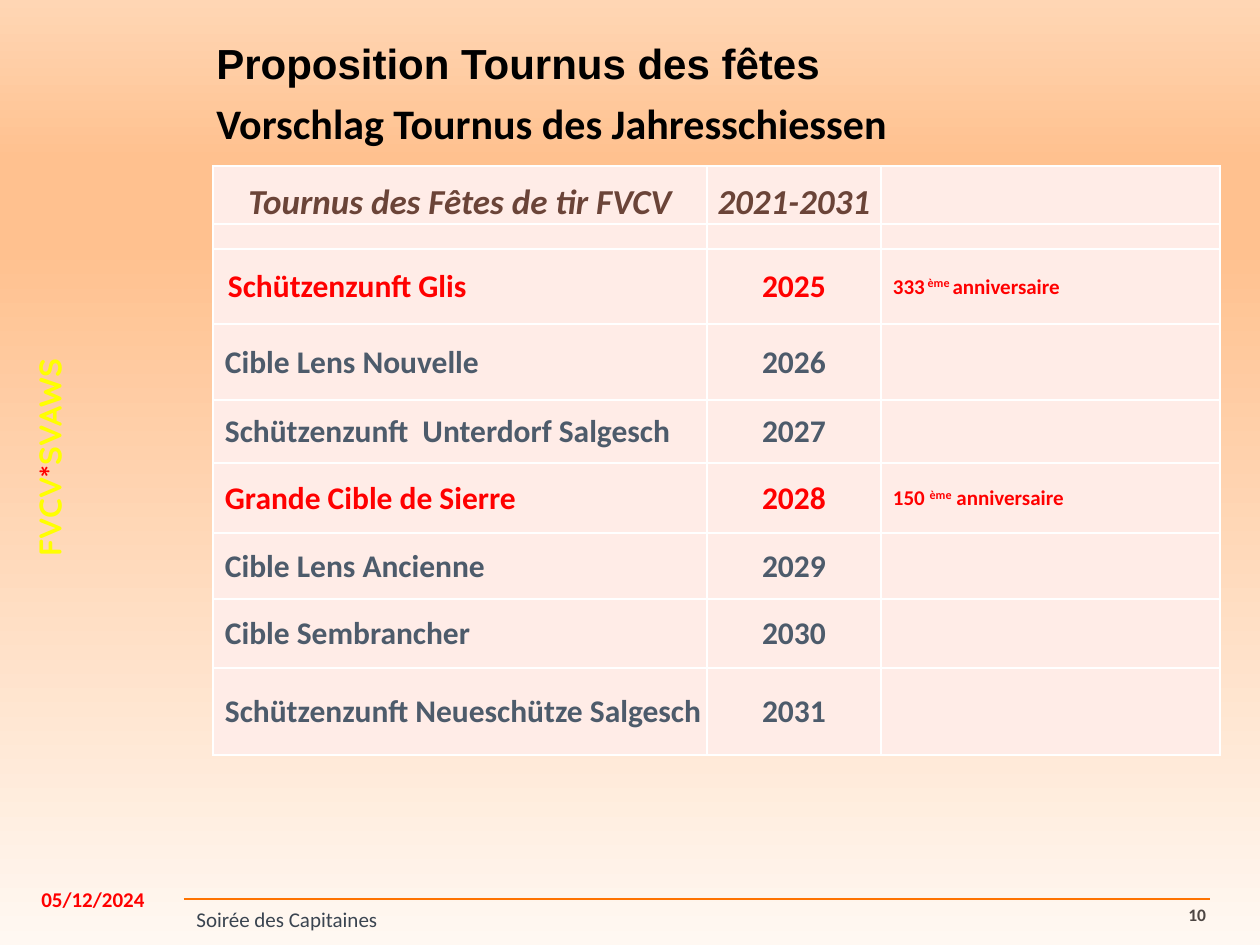
from lxml import etree
from pptx import Presentation
from pptx import util as u
from pptx.dml.color import RGBColor
from pptx.enum import shapes, text
from pptx.oxml.ns import qn

# Content
BACKGROUND = [(0, "FFF8F2"), (74, "FFC18F"), (83, "FFC18F"), (100, "FFD6B4")]
HEADINGS = [("Proposition Tournus des fêtes", "Arial"),
            ("Vorschlag Tournus des Jahresschiessen", "Calibri")]
BANNER = [("FVCV", "FFFF00"), ("*", "FF0000"), ("SVAWS", "FFFF00")]
HEADER = ("Tournus des Fêtes de tir FVCV", "2021-2031")
# society, year, anniversary (number, ordinal, word), row height
FESTIVALS = [
    ("Schützenzunft Glis", "2025", ("333", " ème ", "anniversaire"), 75),
    ("Cible Lens Nouvelle", "2026", None, 76),
    ("Schützenzunft  Unterdorf Salgesch", "2027", None, 63),
    ("Grande Cible de Sierre", "2028", ("150 ", "ème", " anniversaire"), 70),
    ("Cible Lens Ancienne", "2029", None, 66),
    ("Cible Sembrancher", "2030", None, 69),
    ("Schützenzunft Neueschütze Salgesch", "2031", None, 87),
]
COLUMNS = [494, 174, 339]
HEADER_HEIGHT, SPACER_HEIGHT = 58, 25
RED, SLATE, BROWN, CELL = "FF0000", "4D5B6B", "6B4438", "FFECE7"
LEFT, CENTER = text.PP_ALIGN.LEFT, text.PP_ALIGN.CENTER
MIDDLE, BOTTOM = text.MSO_ANCHOR.MIDDLE, text.MSO_ANCHOR.BOTTOM


def px(n):
    return u.Emu(round(n * 914400 / 126))


def rgb(value):
    return RGBColor.from_string(value)


def add_run(paragraph, words, color, **formats):
    run = paragraph.add_run()
    run.text = words
    run.font.color.rgb = rgb(color)
    for name, value in {"name": "Calibri", **formats}.items():
        setattr(run.font, name, value)
    return run


def add_box(left, top, width, height, **formats):
    frame = slide.shapes.add_textbox(px(left), px(top), px(width), px(height)).text_frame
    for name, value in {"word_wrap": True, **formats}.items():
        setattr(frame, name, value)
    return frame


def style_cell(cell):
    cell.fill.solid()
    cell.fill.fore_color.rgb = rgb(CELL)
    properties = cell.fill._xPr
    for index, side in enumerate(("a:lnL", "a:lnR", "a:lnT", "a:lnB")):
        border = etree.Element(qn(side), w=str(u.Pt(1)))
        fill = etree.SubElement(border, qn("a:solidFill"))
        etree.SubElement(fill, qn("a:srgbClr"), val="FFFFFF")
        properties.insert(index, border)
    for name in ("margin_left", "margin_right", "margin_top"):
        setattr(cell, name, px(1))
    cell.margin_bottom = 0
    cell.text_frame.paragraphs[0].font.size = u.Pt(8)


def write_cell(cell, words, color, align=LEFT, anchor=MIDDLE, indent=1, **formats):
    cell.vertical_anchor = anchor
    cell.margin_left = px(indent)
    paragraph = cell.text_frame.paragraphs[0]
    paragraph.alignment = align
    return [add_run(paragraph, part, color, bold=True, **formats) for part in words]


deck = Presentation()
deck.slide_width, deck.slide_height = px(1260), px(945)
slide = deck.slides.add_slide(deck.slide_layouts[6])

# Background gradient, running upwards
background = slide.background.fill
background.gradient()
background.gradient_angle = 90
stops = slide.element.find(".//" + qn("a:gsLst"))
for stop in list(stops):
    stops.remove(stop)
for position, color in BACKGROUND:
    stop = etree.SubElement(stops, qn("a:gs"), pos=str(position * 1000))
    etree.SubElement(stop, qn("a:srgbClr"), val=color)

# Footer rule
rule = slide.shapes.add_connector(shapes.MSO_CONNECTOR.STRAIGHT,
                                  px(184), px(899), px(1210), px(899))
rule.line.color.rgb = rgb("FE7300")
rule.line.width = u.Pt(0.75)
etree.SubElement(rule.element.spPr, qn("a:effectLst"))

# Vertical banner
banner = add_box(24, 344, 63, 228, word_wrap=False)
banner._txBody.bodyPr.set("vert", "vert270")
banner.paragraphs[0].alignment = CENTER
for words, color in BANNER:
    add_run(banner.paragraphs[0], words, color, name="Quicksand", size=u.Pt(18), bold=True)

# Footer texts
footer = add_box(184, 903, 978, 32, vertical_anchor=MIDDLE)
add_run(footer.paragraphs[0], "Soirée des Capitaines", "3A4450", size=u.Pt(12))
date = add_box(23, 880, 140, 32)
date.paragraphs[0].alignment = CENTER
add_run(date.paragraphs[0], "05/12/2024", RED, size=u.Pt(12), bold=True)
number = add_box(1176, 890, 53, 50, vertical_anchor=MIDDLE)
add_run(number.paragraphs[0], "10", "4D4643", size=u.Pt(10), bold=True)

# Headings
title = add_box(204, 28, 942, 78, margin_top=px(10))
for index, (words, font) in enumerate(HEADINGS):
    line = title.add_paragraph() if index else title.paragraphs[0]
    line.space_before = u.Pt(5 if index else 0)
    add_run(line, words, "000000", name=font, size=u.Pt(24), bold=True)

# Festival table: header, spacer, one row per festival
heights = [HEADER_HEIGHT, SPACER_HEIGHT] + [festival[3] for festival in FESTIVALS]
table = slide.shapes.add_table(len(heights), len(COLUMNS), px(213), px(166),
                               px(sum(COLUMNS)), px(sum(heights))).table
table.first_row = table.horz_banding = False
for column, width in zip(table.columns, COLUMNS):
    column.width = px(width)
for row, height in zip(table.rows, heights):
    row.height = px(height)
for cell in table.iter_cells():
    style_cell(cell)
for column, words in enumerate(HEADER):
    write_cell(table.cell(0, column), [words], BROWN, CENTER, BOTTOM,
               size=u.Pt(20), italic=True)
for row, (society, year, anniversary, _) in enumerate(FESTIVALS, start=2):
    color = RED if anniversary else SLATE
    indent = 15 if row == 2 else 12
    write_cell(table.cell(row, 0), [society], color, indent=indent, size=u.Pt(18))
    write_cell(table.cell(row, 1), [year], color, CENTER, size=u.Pt(18))
    if anniversary:
        runs = write_cell(table.cell(row, 2), anniversary, color, indent=12, size=u.Pt(12))
        runs[1].font._element.set("baseline", "30000")

deck.save("out.pptx")
